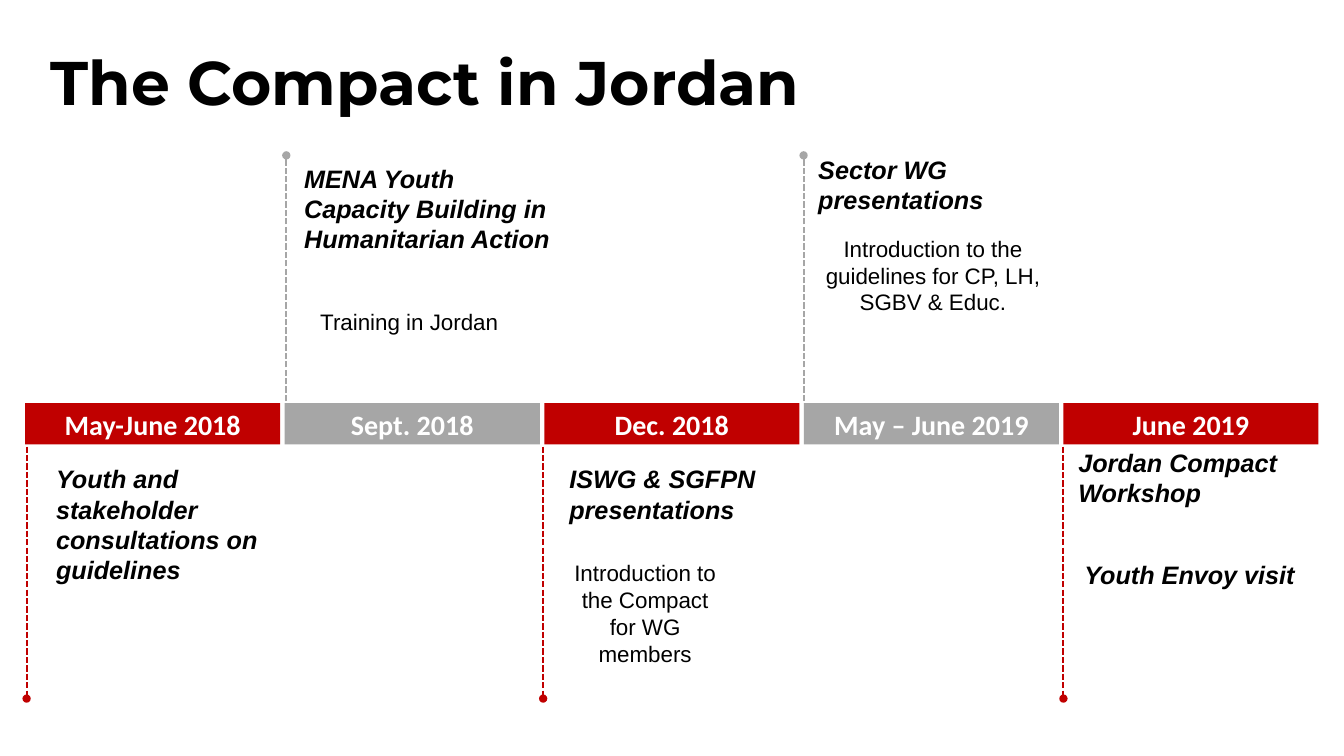
from lxml.etree import SubElement
from pptx import Presentation
from pptx.dml.color import RGBColor
from pptx.enum.dml import MSO_LINE_DASH_STYLE as Dash
from pptx.enum.shapes import MSO_CONNECTOR_TYPE as Connector, MSO_SHAPE as Shape
from pptx.enum.text import MSO_ANCHOR as Anchor, PP_ALIGN as Align
from pptx.oxml.ns import qn
from pptx.util import Pt

RED, GRAY, BLACK, WHITE = "C00000", "A6A6A6", "000000", "FFFFFF"
BAR_LEFT, BAR_TOP, BAR_WIDTH, BAR_HEIGHT, BAR_PITCH = 18, 288, 182.2, 29.5, 185.4

PERIODS = [
    ("May-June 2018", 19),
    ("Sept. 2018", 204.5),
    ("Dec. 2018", 388),
    ("May – June 2019", 574),
    ("June 2019", 759.6),
]
HEADINGS = [
    ("Youth and stakeholder consultations on guidelines", 33, 327.6, 180, 94.3),
    ("MENA Youth Capacity Building in Humanitarian Action", 210.2, 113, 198, 72.7),
    ("ISWG & SGFPN presentations", 399.6, 327.6, 225.4, 51),
    ("Sector WG presentations", 577.4, 106.6, 213.8, 51),
    ("Jordan Compact Workshop", 763.2, 316, 194.4, 51),
    ("Youth Envoy visit", 767.5, 396, 194.4, 29),
]
DETAILS = [
    ("Training in Jordan", 200.9, 216.7, 182.9, 26.6),
    ("Introduction to the Compact for WG members", 398.9, 396, 123.8, 85),
    ("Introduction to the guidelines for CP, LH, SGBV & Educ.", 574.6, 164.2, 183.6, 65.5),
]


def color(value):
    return RGBColor.from_string(value)


class TimelineSlide:
    """Draws the elements of a timeline in one style on one slide."""

    def __init__(self, presentation):
        self.slide = presentation.slides.add_slide(presentation.slide_layouts[6])
        self.font = "Arial"

    def set_text(self, shape, text, size, font=None, fill=BLACK, bold=False,
                 italic=False, align=Align.LEFT):
        frame = shape.text_frame
        frame.word_wrap = True
        frame.text = text
        paragraph = frame.paragraphs[0]
        paragraph.alignment = align
        style = paragraph.runs[0].font
        style.name, style.size = font or self.font, Pt(size)
        style.bold, style.italic = bold, italic
        style.color.rgb = color(fill)

    def text(self, text, left, top, width, height, size, **style):
        shape = self.slide.shapes.add_textbox(Pt(left), Pt(top), Pt(width), Pt(height))
        self.set_text(shape, text, size, **style)
        return shape

    def title(self, text):
        shape = self.text(text, 36, 41.8, 648, 51.8, 44, font="Montserrat", bold=True)
        frame = shape.text_frame
        frame.margin_left = frame.margin_top = frame.margin_right = frame.margin_bottom = 0
        frame.paragraphs[0].line_spacing = 0.8

    def bar(self, text, left, fill):
        shape = self.slide.shapes.add_shape(
            Shape.RECTANGLE, Pt(left), Pt(BAR_TOP), Pt(BAR_WIDTH), Pt(BAR_HEIGHT))
        shape.shadow.inherit = False
        shape.fill.solid()
        shape.fill.fore_color.rgb = color(fill)
        shape.line.fill.background()
        shape.text_frame.margin_top = shape.text_frame.margin_bottom = 0
        shape.text_frame.vertical_anchor = Anchor.MIDDLE
        self.set_text(shape, text, 20, font="Calibri", fill=WHITE, bold=True,
                      align=Align.CENTER)

    def marker(self, x, start, end, stroke):
        connector = self.slide.shapes.add_connector(
            Connector.STRAIGHT, Pt(x), Pt(start), Pt(x), Pt(end))
        line = connector.line
        line.color.rgb = color(stroke)
        line.width = Pt(1.5)
        line.dash_style = Dash.SQUARE_DOT
        properties = connector._element.spPr
        SubElement(properties.find(qn("a:ln")), qn("a:tailEnd"), type="oval")
        SubElement(properties, qn("a:effectLst"))


def main():
    presentation = Presentation()
    presentation.slide_width, presentation.slide_height = Pt(960), Pt(540)
    timeline = TimelineSlide(presentation)
    timeline.title("The Compact in Jordan")
    for index, (period, marker_x) in enumerate(PERIODS):
        above = index % 2 == 1
        fill = GRAY if above else RED
        start, end = (286.5, 111) if above else (319, 499)
        timeline.bar(period, BAR_LEFT + index * BAR_PITCH, fill)
        timeline.marker(marker_x, start, end, fill)
    for heading in HEADINGS:
        timeline.text(*heading, size=18, bold=True, italic=True)
    for detail in DETAILS:
        timeline.text(*detail, size=16, align=Align.CENTER)
    presentation.save("out.pptx")


if __name__ == "__main__":
    main()
